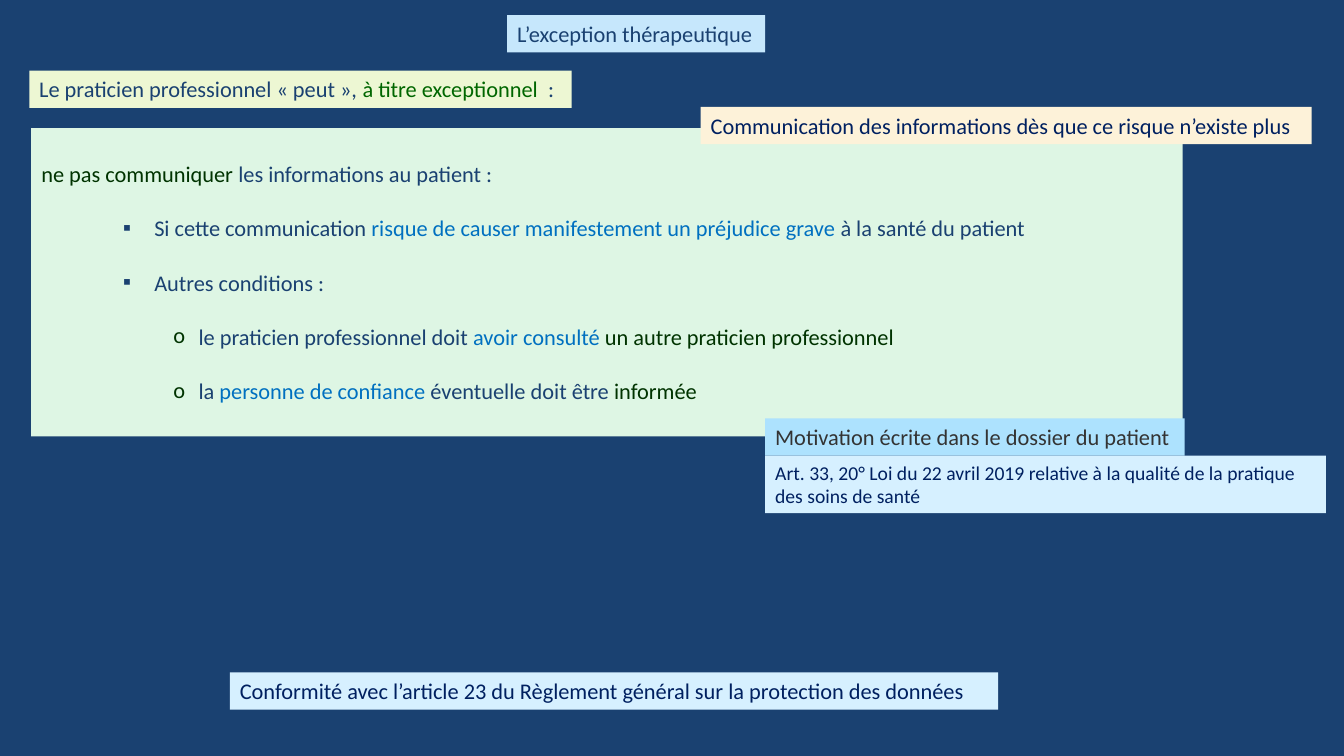
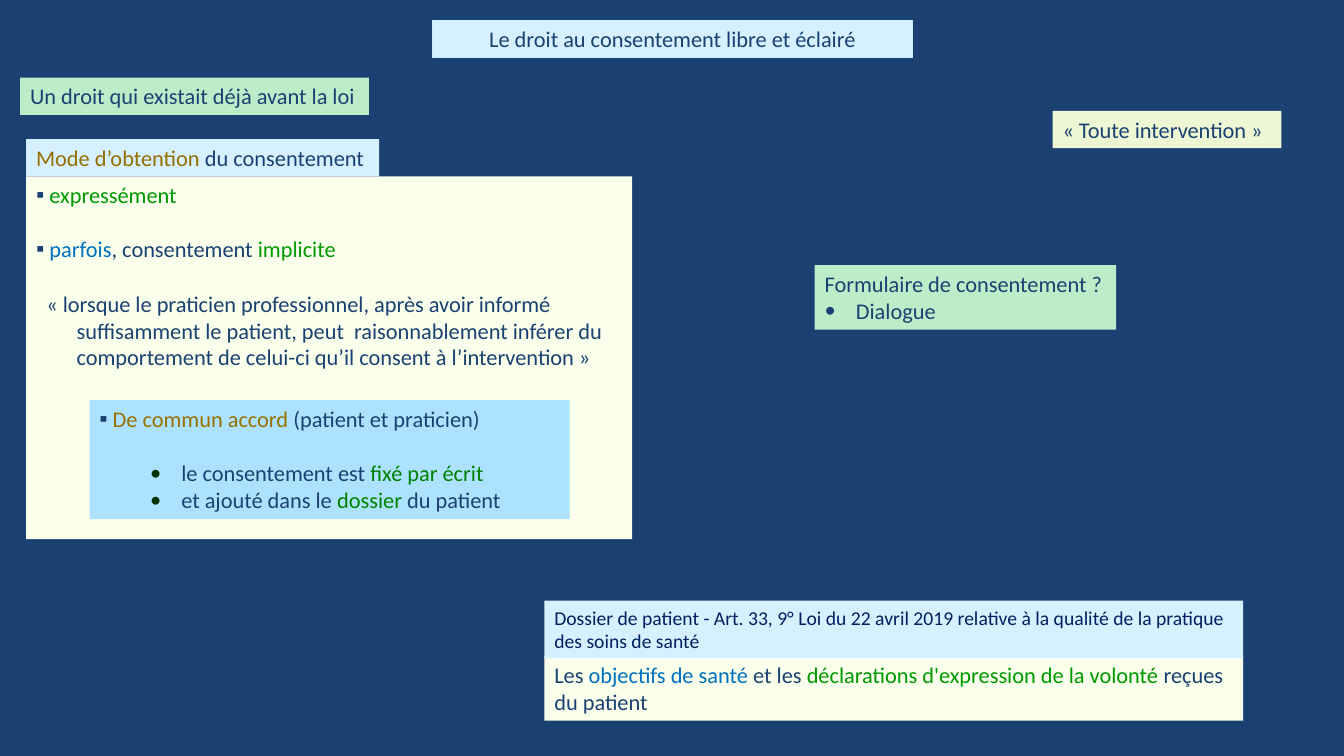
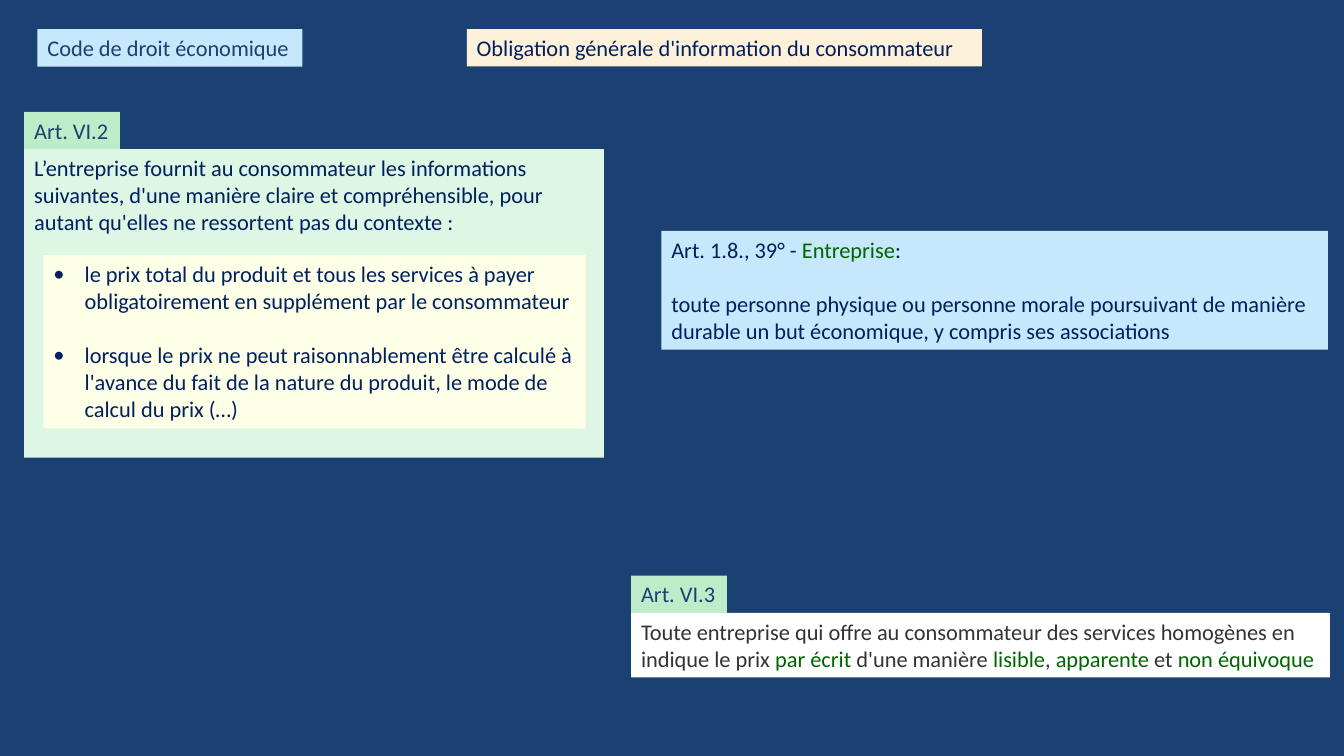
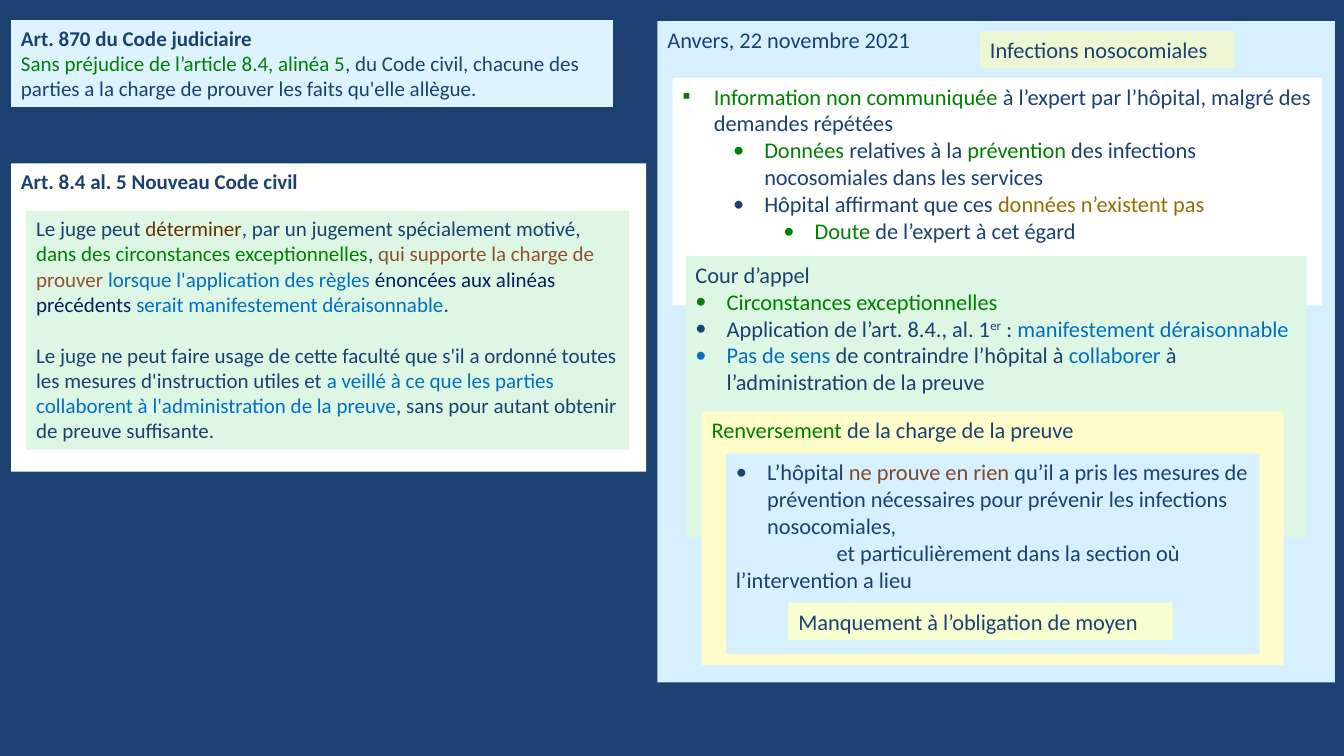
from dataclasses import dataclass

from lxml import etree
from pptx import Presentation
from pptx.dml.color import RGBColor
from pptx.enum.text import MSO_ANCHOR as Anchor, MSO_AUTO_SIZE as AutoSize, PP_ALIGN as Align
from pptx.oxml.ns import qn
from pptx.util import Pt

PX = 9144  # EMU in one px, 100 px to the inch
FONT = "Calibri"
LINE_HEIGHT = 1.22  # height of one text line, in font sizes
COLORS = {
    # page and panels
    "page": "1A4171", "sky": "C6E7FC", "ice": "D6F0FF", "frost": "DDF3FF",
    "azure": "ADE2FE", "edge": "CCECFF", "lime": "EDF7D3", "mint": "DEF6E4",
    "green": "BDECC9", "sand": "FDF2D9", "cream": "FAFFEB", "ivory": "FEFFE7",
    "pearl": "FFFFFB", "butter": "FEFCCA", "lemon": "F8FFD1", "white": "FFFFFF",
    # text
    "navy": "1A4171", "ink": "002060", "grey": "333333", "blue": "0070C0",
    "pine": "003300", "forest": "006600", "leaf": "008000", "grass": "009900",
    "gold": "956E01", "amber": "997101", "brown": "663300", "rust": "91522F",
    "clay": "82492A",
}


@dataclass
class Item:
    """One paragraph: spans are plain strings or (text, colour[, baseline])."""
    spans: tuple
    mark: str = ""
    mark_color: str = ""
    left: int = 0
    first: int = 0
    level: int = 0
    gap: bool = False
    bold: bool = False


def text(*spans, **options):
    return Item(spans, **options)


def bullet(*spans, mark="•", left=31, hang=31, **options):
    return Item(spans, mark=mark, left=left, first=-hang, **options)


def rgb(name):
    return RGBColor.from_string(COLORS[name])


def set_bullet(props, item):
    if not item.mark:
        etree.SubElement(props, qn("a:buNone"))
        return
    if item.mark_color:
        color = etree.SubElement(props, qn("a:buClr"))
        etree.SubElement(color, qn("a:srgbClr"), val=COLORS[item.mark_color])
    etree.SubElement(props, qn("a:buFont"), typeface=FONT)
    etree.SubElement(props, qn("a:buChar"), char=item.mark)


def write_item(para, item, size, color, align):
    para.alignment = align
    para.level = item.level
    para.space_before = Pt(round(size * LINE_HEIGHT, 1) if item.gap else 0)
    props = para._p.get_or_add_pPr()
    props.set("marL", str(item.left * PX))
    props.set("indent", str(item.first * PX))
    set_bullet(props, item)
    for part in item.spans:
        words, tint, *baseline = (part, color) if isinstance(part, str) else part
        span = para.add_run()
        span.text = words
        span.font.name = FONT
        span.font.size = Pt(size)
        span.font.bold = item.bold
        span.font.color.rgb = rgb(tint)
        if baseline:
            span.font._element.set("baseline", str(baseline[0] * 1000))


def panel(page, at, fill, *items, holder=None, size=16, color="navy",
          align=Align.LEFT, top=5):
    """Filled text box, or a placeholder laid out as one, put in front."""
    left, upper, width, height = (value * PX for value in at)
    if holder is None:
        box = page.shapes.add_textbox(left, upper, width, height)
    else:
        box = holder
        box.left, box.top, box.width, box.height = left, upper, width, height
        box._element.getparent().append(box._element)
    box.fill.solid()
    box.fill.fore_color.rgb = rgb(fill)
    frame = box.text_frame
    frame.word_wrap = True
    frame.auto_size = AutoSize.NONE
    frame.vertical_anchor = Anchor.TOP
    frame.margin_left = frame.margin_right = 10 * PX
    frame.margin_top, frame.margin_bottom = top * PX, 5 * PX
    for index, item in enumerate(items):
        para = frame.add_paragraph() if index else frame.paragraphs[0]
        write_item(para, Item((item,)) if isinstance(item, str) else item,
                   size, color, align)
    return box


def add_page(deck):
    page = deck.slides.add_slide(deck.slide_layouts[1])
    return page, page.shapes.title, page.placeholders[1]


def therapeutic_exception(deck):
    page, title, body = add_page(deck)
    panel(page, (503, 15, 256, 37), "sky", "L’exception thérapeutique", holder=title)
    panel(page, (29, 70, 538, 37), "lime",
          text("Le praticien professionnel « peut », ",
               ("à titre exceptionnel  ", "forest"), ":"))
    condition = dict(mark="▪", left=112, level=1, gap=True)
    duty = dict(mark="o", mark_color="pine", left=156, hang=25, level=2, gap=True)
    panel(page, (31, 127, 1142, 306), "mint",
          text(("ne pas communiquer ", "pine"), "les informations au patient :"),
          bullet("Si cette communication ",
                 ("risque de causer manifestement un préjudice grave ", "blue"),
                 "à la santé du patient", **condition),
          bullet("Autres conditions :", **condition),
          bullet("le praticien professionnel doit ", ("avoir consulté ", "blue"),
                 ("un autre praticien professionnel", "pine"), **duty),
          bullet("la ", ("personne de confiance ", "blue"),
                 "éventuelle doit être ", ("informée", "pine"), **duty),
          holder=body, top=32)
    panel(page, (695, 106, 606, 37), "sand",
          "Communication des informations dès que ce risque n’existe plus", color="ink")
    panel(page, (759, 415, 416, 37), "azure",
          "Motivation écrite dans le dossier du patient", color="grey")
    panel(page, (759, 452, 556, 57), "ice",
          "Art. 33, 20° Loi du 22 avril 2019 relative à la qualité de la pratique "
          "des soins de santé", size=14, color="ink")
    panel(page, (228, 667, 762, 37), "ice",
          "Conformité avec l’article 23 du Règlement général sur la protection des données",
          color="ink")


def informed_consent(deck):
    page, title, body = add_page(deck)
    heading = panel(page, (429, 20, 476, 37), "ice",
                    "Le droit au consentement libre et éclairé",
                    holder=title, align=Align.CENTER)
    heading.line.color.rgb = rgb("edge")
    heading.line.width = Pt(0.75)
    panel(page, (20, 77, 346, 37), "green", "Un droit qui existait déjà avant la loi")
    panel(page, (1044, 110, 227, 37), "lime", "« Toute intervention »")

    # Ways of obtaining consent
    way = dict(mark="▪", mark_color="navy", left=13, hang=13)
    panel(page, (26, 138, 350, 37), "ice",
          text(("Mode d’obtention ", "gold"), "du consentement"))
    panel(page, (26, 175, 601, 360), "cream",
          bullet(("expressément", "grass"), **way),
          bullet(("parfois", "blue"), ", consentement ", ("implicite", "grass"),
                 gap=True, **way),
          text("« lorsque le praticien professionnel, après avoir informé suffisamment "
               "le patient, peut  raisonnablement inférer du comportement de celui-ci "
               "qu’il consent à l’intervention »", left=40, first=-30, level=1, gap=True),
          holder=body)
    record = dict(mark_color="pine", left=81, level=1)
    panel(page, (89, 397, 476, 118), "azure",
          bullet(("De commun accord ", "amber"), "(patient et praticien)", **way),
          bullet("le consentement est ", ("fixé par écrit", "leaf"), gap=True, **record),
          bullet("et ajouté dans le ", ("dossier", "leaf"), " du patient", **record))
    panel(page, (808, 263, 299, 64), "green",
          "Formulaire de consentement ?", bullet("Dialogue"))

    # Patient file
    panel(page, (540, 651, 693, 64), "cream",
          text("Les ", ("objectifs de santé ", "blue"), "et les ",
               ("déclarations d'expression de la volonté ", "grass"),
               "reçues du patient"))
    panel(page, (540, 596, 693, 57), "ice",
          "Dossier de patient - Art. 33, 9° Loi du 22 avril 2019 relative à la qualité "
          "de la pratique des soins de santé", size=14, color="ink")


def economic_code(deck):
    page, title, body = add_page(deck)
    panel(page, (37, 29, 263, 37), "sky", "Code de droit économique", holder=title)
    panel(page, (463, 29, 511, 37), "sand",
          "Obligation générale d'information du consommateur", color="ink")

    # Article tabs
    for left, top, name in ((24, 111, "Art. VI.2"), (626, 571, "Art. VI.3")):
        panel(page, (left, top, 95, 37), "green", name)

    # Article contents
    panel(page, (24, 148, 575, 306), "mint",
          "L’entreprise fournit au consommateur les informations suivantes, d'une manière "
          "claire et compréhensible, pour autant qu'elles ne ressortent pas du contexte :",
          color="ink")
    panel(page, (43, 253, 538, 172), "ivory",
          bullet("le prix total du produit et tous les services à payer obligatoirement "
                 "en supplément par le consommateur"),
          bullet("lorsque le prix ne peut raisonnablement être calculé à l'avance du fait "
                 "de la nature du produit, le mode de calcul du prix (…)", gap=True),
          holder=body, color="ink")
    panel(page, (656, 229, 661, 118), "sky",
          text("Art. 1.8., 39° - ", ("Entreprise", "forest"), ":"),
          text("toute personne physique ou personne morale poursuivant de manière durable "
               "un but économique, y compris ses associations", gap=True),
          color="ink")
    panel(page, (626, 608, 693, 64), "white",
          text("Toute entreprise qui offre au consommateur des services homogènes en "
               "indique le prix ", ("par écrit ", "forest"), "d'une manière ",
               ("lisible", "forest"), ", ", ("apparente", "forest"), " et ",
               ("non équivoque", "forest")),
          color="grey")


def burden_of_proof(deck):
    page, title, body = add_page(deck)

    # Legal texts
    panel(page, (11, 20, 597, 86), "frost",
          text("Art. 870 du Code judiciaire", bold=True),
          text(("Sans préjudice de l’article 8.4, alinéa 5", "leaf"),
               ", du Code civil, chacune des parties a la charge de prouver les faits "
               "qu'elle allègue."), size=15)
    panel(page, (11, 162, 630, 306), "pearl",
          text("Art. 8.4 al. 5 Nouveau Code civil", bold=True), size=15)
    panel(page, (26, 209, 598, 237), "mint",
          text("Le juge peut ", ("déterminer", "brown"),
               ", par un jugement spécialement motivé, ",
               ("dans des circonstances exceptionnelles", "leaf"), ", ",
               ("qui supporte la charge de prouver ", "rust"),
               ("lorsque l'application des règles ", "blue"),
               ("énoncées aux alinéas précédents ", "ink"),
               ("serait manifestement déraisonnable", "blue"), "."),
          text("Le juge ne peut faire usage de cette faculté que s'il a ordonné toutes "
               "les mesures d'instruction utiles et ",
               ("a veillé à ce que les parties collaborent à l'administration de la preuve",
                "blue"),
               ", sans pour autant obtenir de preuve suffisante.", gap=True), size=15)

    # Court case, nested panels
    panel(page, (652, 21, 672, 656), "ice", "Anvers, 22 novembre 2021", holder=title)
    panel(page, (972, 31, 253, 37), "lime", "Infections nosocomiales")
    panel(page, (667, 77, 644, 226), "white",
          bullet(("Information non communiquée ", "leaf"),
                 "à l’expert par l’hôpital, malgré des demandes répétées", mark="▪"),
          bullet(("Données", "leaf"), " relatives à la ", ("prévention", "leaf"),
                 " des infections nocosomiales dans les services", left=81, level=1),
          bullet("Hôpital affirmant que ces ", ("données n’existent pas", "gold"),
                 left=81, level=1),
          bullet(("Doute", "leaf"), " de l’expert à cet égard", left=131, level=2),
          holder=body)
    panel(page, (680, 254, 616, 279), "mint",
          "Cour d’appel",
          bullet(("Circonstances exceptionnelles", "leaf")),
          bullet("Application de l’art. 8.4., al. 1", ("er", "navy", 30), " : ",
                 ("manifestement déraisonnable", "blue")),
          bullet(("Pas de sens ", "blue"), "de contraindre l’hôpital à ",
                 ("collaborer", "blue"), " à l’administration de la preuve"))
    panel(page, (696, 408, 577, 252), "butter",
          text(("Renversement", "leaf"), " de la charge de la preuve"))
    panel(page, (720, 450, 529, 199), "ice",
          bullet("L’hôpital ", ("ne prouve en rien ", "clay"),
                 "qu’il a pris les mesures de prévention nécessaires pour prévenir les "
                 "infections nosocomiales,"),
          text("et particulièrement dans la section où l’intervention a lieu", first=100))
    panel(page, (782, 598, 381, 37), "lemon", "Manquement à l’obligation de moyen")


def main():
    deck = Presentation()
    deck.slide_width, deck.slide_height = 1333 * PX, 750 * PX
    background = deck.slide_master.background.fill
    background.solid()
    background.fore_color.rgb = rgb("page")
    for build in (therapeutic_exception, informed_consent, economic_code, burden_of_proof):
        build(deck)
    deck.save("out.pptx")


if __name__ == "__main__":
    main()
